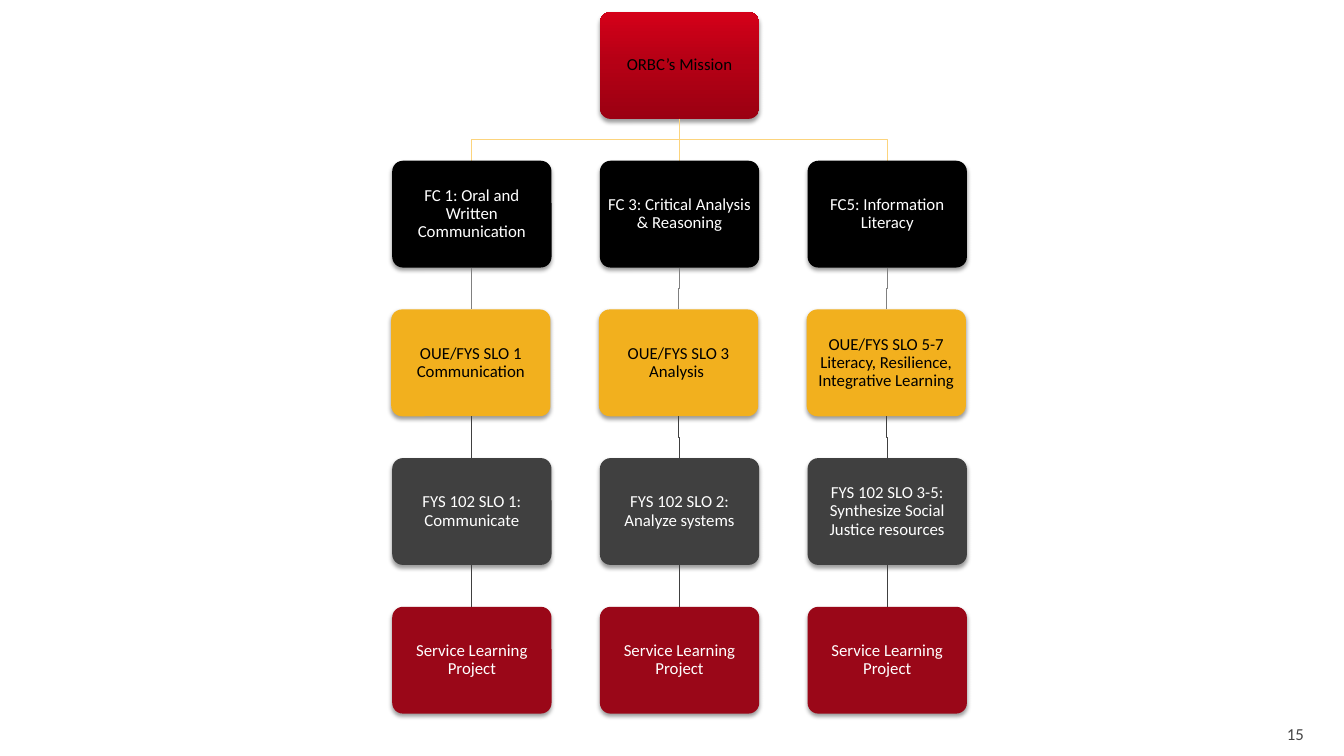
import copy
from lxml import etree
from pptx import Presentation, util as u
from pptx.dml import color
from pptx.enum import shapes, text
from pptx.oxml import ns

FONT = "Calibri"
LEFT, TOP, LAST = 3.89, 0.12, 6.02      # first column, first and last row
STEP_X, STEP_Y = 2.06, (LAST - TOP) / 4
WIDE, HIGH = 1.58, 1.06                 # box size
NUDGE = -0.01                           # the gold row sits slightly left

# Box fill, text colour, colour of the line from above, shift, labels
ROWS = [
    ("000000", "FFFFFF", "FCD47D", 0,
     ["FC 1: Oral and Written Communication",
      "FC 3: Critical Analysis & Reasoning",
      "FC5: Information Literacy"]),
    ("F2B01E", "000000", "808080", NUDGE,
     ["OUE/FYS SLO 1\vCommunication",
      "OUE/FYS SLO 3\vAnalysis ",
      "OUE/FYS SLO 5-7\vLiteracy, Resilience, Integrative Learning"]),
    ("404040", "FFFFFF", "404040", 0,
     ["FYS 102 SLO 1: Communicate",
      "FYS 102 SLO 2: Analyze systems",
      "FYS 102 SLO 3-5: Synthesize Social Justice resources"]),
    ("9A0718", "FFFFFF", "404040", 0, ["Service Learning Project"] * 3),
]


def rgb(code):
    return color.RGBColor.from_string(code)


def node(parent, tag, **attrs):
    return etree.SubElement(parent, ns.qn(tag), attrs)


def write(shape, words, ink="000000", size=12, align="CENTER",
          anchor="MIDDLE", inset=(0.05, 0.05, 0.05, 0.05), lead=0.9):
    frame = shape.text_frame
    frame.word_wrap = True
    frame.vertical_anchor = getattr(text.MSO_ANCHOR, anchor)
    (frame.margin_left, frame.margin_top,
     frame.margin_right, frame.margin_bottom) = map(u.Inches, inset)
    para = frame.paragraphs[0]
    para.text = words
    para.alignment = getattr(text.PP_ALIGN, align)
    para.line_spacing = lead
    for run in para.runs:
        run.font.name = FONT
        run.font.size = u.Pt(size)
        run.font.color.rgb = rgb(ink)
    # Line breaks take the format of the text around them
    for gap in para._p.findall(ns.qn("a:br")):
        gap.append(copy.deepcopy(para.runs[0]._r.rPr))


def shade(shape):
    """Soft shadow straight below the shape."""
    shape.shadow.inherit = False
    effect = shape._element.spPr.find(ns.qn("a:effectLst"))
    drop = node(effect, "a:outerShdw", blurRad=str(u.Pt(3.1)),
                dist=str(u.Pt(2)), dir="5400000", rotWithShape="0")
    node(node(drop, "a:srgbClr", val="000000"), "a:alpha", val="38000")


def blend(shape, stops):
    """Gradient that runs from bottom to top."""
    shape.fill.gradient()
    grad = shape._element.spPr.find(ns.qn("a:gradFill"))
    for child in list(grad):
        grad.remove(child)
    group = node(grad, "a:gsLst")
    for share, code in stops:
        stop = node(group, "a:gs", pos=str(share * 1000))
        node(stop, "a:srgbClr", val=code)
    node(grad, "a:lin", ang="16200000", scaled="0")


def box(slide, col, row, words, fill, ink, shift=0):
    shape = slide.shapes.add_shape(
        shapes.MSO_SHAPE.ROUNDED_RECTANGLE,
        u.Inches(LEFT + col * STEP_X + shift), u.Inches(TOP + row * STEP_Y),
        u.Inches(WIDE), u.Inches(HIGH))
    shape.adjustments[0] = 0.1
    if isinstance(fill, str):
        shape.fill.solid()
        shape.fill.fore_color.rgb = rgb(fill)
    else:
        blend(shape, fill)
    shape.line.fill.background()
    shade(shape)
    write(shape, words, ink=ink)


def link(slide, start, end, row, ink):
    """Line down to a row; it bends halfway if the ends are not aligned."""
    low = TOP + row * STEP_Y
    high = low - STEP_Y + HIGH
    start, end, high, mid, low = map(
        u.Inches, (start, end, high, (high + low) / 2, low))
    if start == end:
        line = slide.shapes.add_connector(
            shapes.MSO_CONNECTOR.STRAIGHT, start, high, end, low)
        node(line._element.spPr, "a:effectLst")
    else:
        form = slide.shapes.build_freeform(start, high)
        form.add_line_segments([(start, mid), (end, mid), (end, low)],
                               close=False)
        line = form.convert_to_shape()
        line.fill.background()
        line.shadow.inherit = False
    line.line.color.rgb = rgb(ink)
    line.line.width = u.Pt(0.5)


def main():
    deck = Presentation()
    deck.slide_width, deck.slide_height = u.Inches(13.33), u.Inches(7.5)
    slide = deck.slides.add_slide(deck.slide_layouts[6])

    # Page number
    page = slide.shapes.add_textbox(
        *map(u.Inches, (11.96, 7.08, 1.07, 0.3)))
    write(page, "15", ink="454545", align="RIGHT", anchor="BOTTOM",
          inset=(0.1, 0.05, 0.1, 0), lead=1.0)

    # Mission at the top of the middle column
    box(slide, 1, 0, "ORBC’s Mission",
        [(0, "9B0012"), (55, "B60015"), (100, "D40019")], "000000")

    # Three branches, each row linked to the one above
    for col in range(3):
        mid = LEFT + col * STEP_X + WIDE / 2
        above = LEFT + STEP_X + WIDE / 2
        for row, (fill, ink, tint, shift, labels) in enumerate(ROWS, 1):
            link(slide, above, mid + shift, row, tint)
            box(slide, col, row, labels[col], fill, ink, shift)
            above = mid + shift

    deck.save("out.pptx")


if __name__ == "__main__":
    main()
